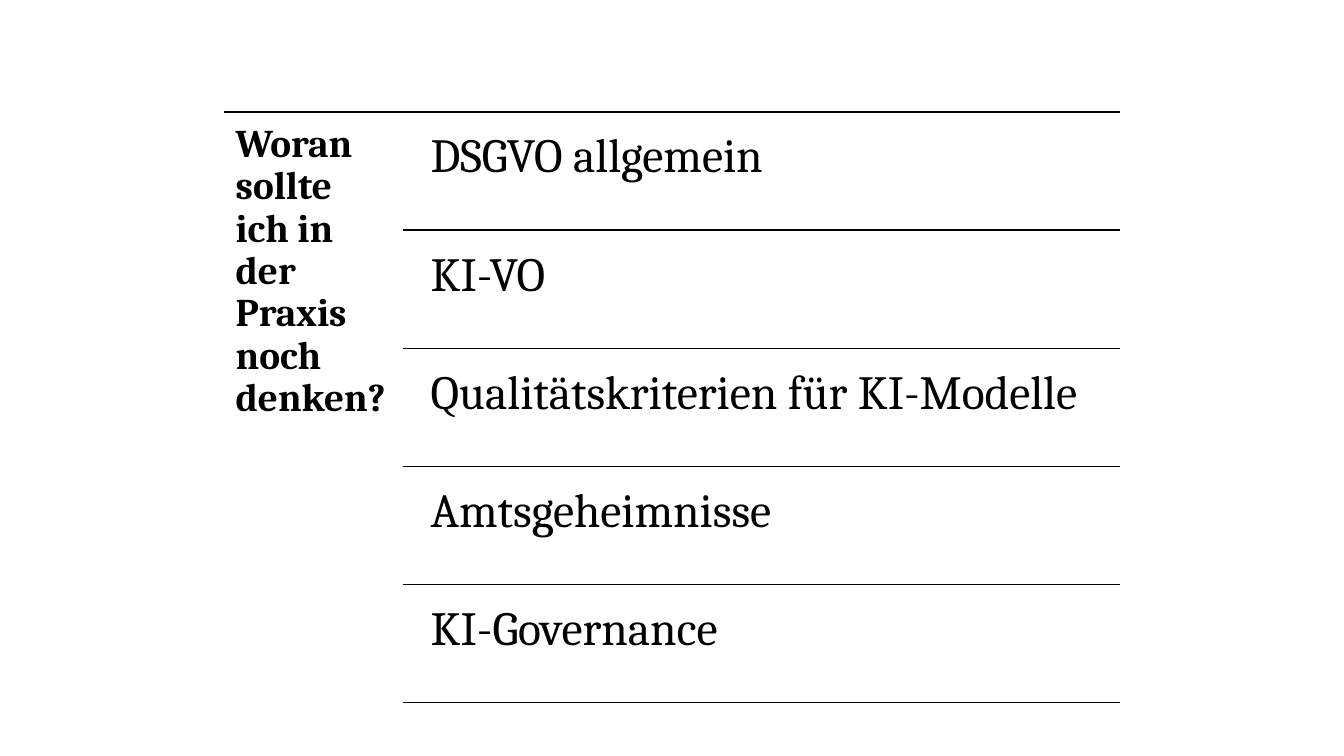
from dataclasses import dataclass

from lxml.etree import SubElement
from pptx import Presentation
from pptx.dml.color import RGBColor as Color
from pptx.enum.shapes import MSO_CONNECTOR as Link
from pptx.enum.text import MSO_ANCHOR as Anchor
from pptx.oxml.ns import qn
from pptx.util import Pt


@dataclass(frozen=True)
class Theme:
    ink: Color = Color(0, 0, 0)
    font: str = "Cambria"
    title: int = 28
    item: int = 34
    rule: int = 1


THEME = Theme()
TITLE = "Woran sollte ich in der Praxis noch denken?"
ITEMS = [
    "DSGVO allgemein",
    "KI-VO",
    "Qualitätskriterien für KI-Modelle",
    "Amtsgeheimnisse",
    "KI-Governance",
]
LEFT, RIGHT, TOP = 160, 800, 80
SPLIT = 288
PITCH = 84.4
GAP = 4
INDENT = 9.4


def add_rule(slide, left, y):
    """Draw a horizontal line from left to the right edge."""
    rule = slide.shapes.add_connector(
        Link.STRAIGHT, Pt(left), Pt(y), Pt(RIGHT), Pt(y))
    rule.line.color.rgb = THEME.ink
    rule.line.width = Pt(THEME.rule)
    SubElement(rule._element.spPr, qn("a:effectLst"))


def add_label(slide, text, box, size, inset, bold=False):
    frame = slide.shapes.add_textbox(*map(Pt, box)).text_frame
    frame.word_wrap = True
    frame.vertical_anchor = Anchor.TOP
    frame.margin_left = frame.margin_right = Pt(inset)
    frame.margin_top = frame.margin_bottom = Pt(inset)
    para = frame.paragraphs[0]
    para.line_spacing = 0.9
    run = para.add_run()
    run.text = text
    run.font.name = THEME.font
    run.font.size = Pt(size)
    run.font.bold = bold
    run.font.color.rgb = THEME.ink


def main():
    deck = Presentation()
    deck.slide_width, deck.slide_height = Pt(960), Pt(540)
    slide = deck.slides.add_slide(deck.slide_layouts[6])

    add_rule(slide, LEFT, TOP)
    box = LEFT, TOP, SPLIT - LEFT, PITCH * len(ITEMS) + GAP
    add_label(slide, TITLE, box, THEME.title, 8.4, bold=True)

    left = SPLIT + INDENT
    for row, item in enumerate(ITEMS):
        top = TOP + row * PITCH
        box = left, top + GAP, RIGHT - left, PITCH - GAP
        add_label(slide, item, box, THEME.item, 10.2)
        add_rule(slide, SPLIT, top + PITCH)

    deck.save("out.pptx")


if __name__ == "__main__":
    main()
